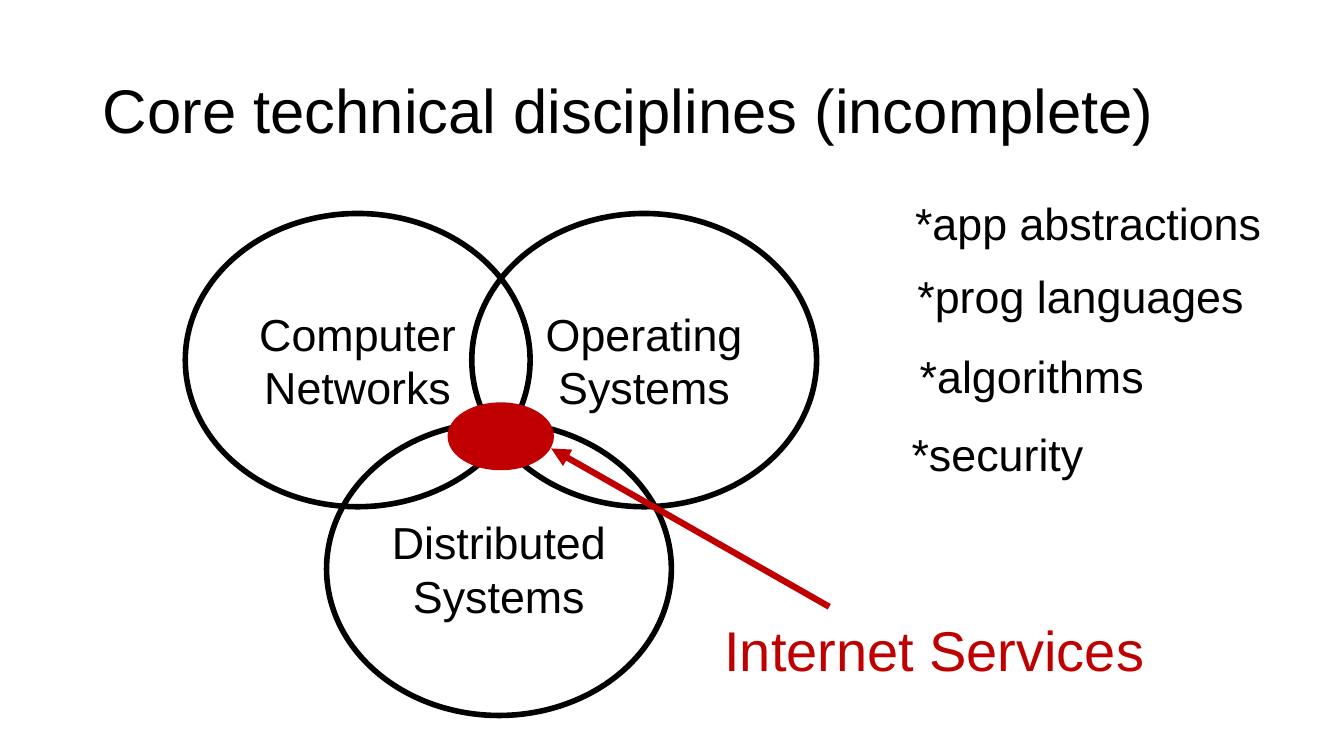
from dataclasses import dataclass

from lxml.etree import SubElement
from pptx import Presentation
from pptx.dml.color import RGBColor
from pptx.enum.shapes import MSO_CONNECTOR, MSO_SHAPE
from pptx.enum.text import MSO_ANCHOR, MSO_AUTO_SIZE, PP_ALIGN
from pptx.oxml.ns import qn
from pptx.shapes.autoshape import Shape
from pptx.slide import Slide
from pptx.text.text import TextFrame
from pptx.util import Cm, Pt

BLACK = RGBColor(0x00, 0x00, 0x00)
RED = RGBColor(0xC0, 0x00, 0x00)
FONT = "Arial"
CIRCLE_W, CIRCLE_H = 8.69, 7.39


@dataclass
class Discipline:
    name: str
    left: float
    top: float


@dataclass
class Label:
    text: str
    left: float
    top: float
    width: float
    height: float = 1.63
    size: int = 32
    color: RGBColor = BLACK
    align: PP_ALIGN = PP_ALIGN.CENTER


DISCIPLINES = [
    Discipline("Computer Networks", 4.67, 5.38),
    Discipline("Operating Systems", 11.89, 5.38),
    Discipline("Distributed Systems", 8.23, 10.64),
]

LABELS = [
    Label("*app abstractions", 22.81, 4.8, 11.05, align=PP_ALIGN.LEFT),
    Label("*prog languages", 22.5, 6.65, 9.47),
    Label("*algorithms", 22.5, 8.66, 7.01),
    Label("*security", 22.5, 10.64, 5.28),
    Label("Internet Services", 17.55, 15.39, 11.99, 1.96, 40, RED),
]


def write(tf: TextFrame, text: str, size: int, color: RGBColor, align: PP_ALIGN) -> None:
    tf.text = text
    tf.word_wrap = True
    p = tf.paragraphs[0]
    p.alignment = align
    font = p.runs[0].font
    font.name = FONT
    font.size = Pt(size)
    font.color.rgb = color


def add_title(s: Slide, text: str) -> None:
    title = s.shapes.title
    title.left, title.top, title.width, title.height = Cm(2.34), Cm(1.02), Cm(29.21), Cm(3.68)
    tf = title.text_frame
    write(tf, text, 44, BLACK, PP_ALIGN.LEFT)
    tf.vertical_anchor = MSO_ANCHOR.MIDDLE
    tf.paragraphs[0].line_spacing = 0.9


def add_ellipse(s: Slide, left: float, top: float, width: float, height: float,
                color: RGBColor) -> Shape:
    sp = s.shapes.add_shape(MSO_SHAPE.OVAL, Cm(left), Cm(top), Cm(width), Cm(height))
    sp.shadow.inherit = False
    sp.fill.background()
    sp.line.color.rgb = color
    sp.line.width = Pt(4)
    return sp


def add_discipline(s: Slide, d: Discipline) -> None:
    sp = add_ellipse(s, d.left, d.top, CIRCLE_W, CIRCLE_H, BLACK)
    write(sp.text_frame, d.name, 32, BLACK, PP_ALIGN.CENTER)
    sp.text_frame.vertical_anchor = MSO_ANCHOR.MIDDLE


def add_overlap(s: Slide) -> None:
    sp = add_ellipse(s, 11.35, 10.21, 2.54, 1.57, RED)
    sp.fill.solid()
    sp.fill.fore_color.rgb = RED


def add_label(s: Slide, label: Label) -> None:
    sp = s.shapes.add_textbox(Cm(label.left), Cm(label.top), Cm(label.width), Cm(label.height))
    write(sp.text_frame, label.text, label.size, label.color, label.align)
    sp.text_frame.auto_size = MSO_AUTO_SIZE.SHAPE_TO_FIT_TEXT


def add_arrow(s: Slide) -> None:
    arrow = s.shapes.add_connector(
        MSO_CONNECTOR.STRAIGHT, Cm(20.9), Cm(15.29), Cm(13.89), Cm(11.3))
    arrow.line.color.rgb = RED
    arrow.line.width = Pt(4.5)
    SubElement(arrow.line._get_or_add_ln(), qn("a:tailEnd"), type="triangle")
    SubElement(arrow._element.spPr, qn("a:effectLst"))


def main() -> None:
    prs = Presentation()
    prs.slide_width, prs.slide_height = Cm(33.87), Cm(19.05)
    s = prs.slides.add_slide(prs.slide_layouts[5])
    add_title(s, "Core technical disciplines (incomplete)")
    for discipline in DISCIPLINES:
        add_discipline(s, discipline)
    add_overlap(s)
    add_arrow(s)
    for label in LABELS:
        add_label(s, label)
    prs.save("out.pptx")


if __name__ == "__main__":
    main()
